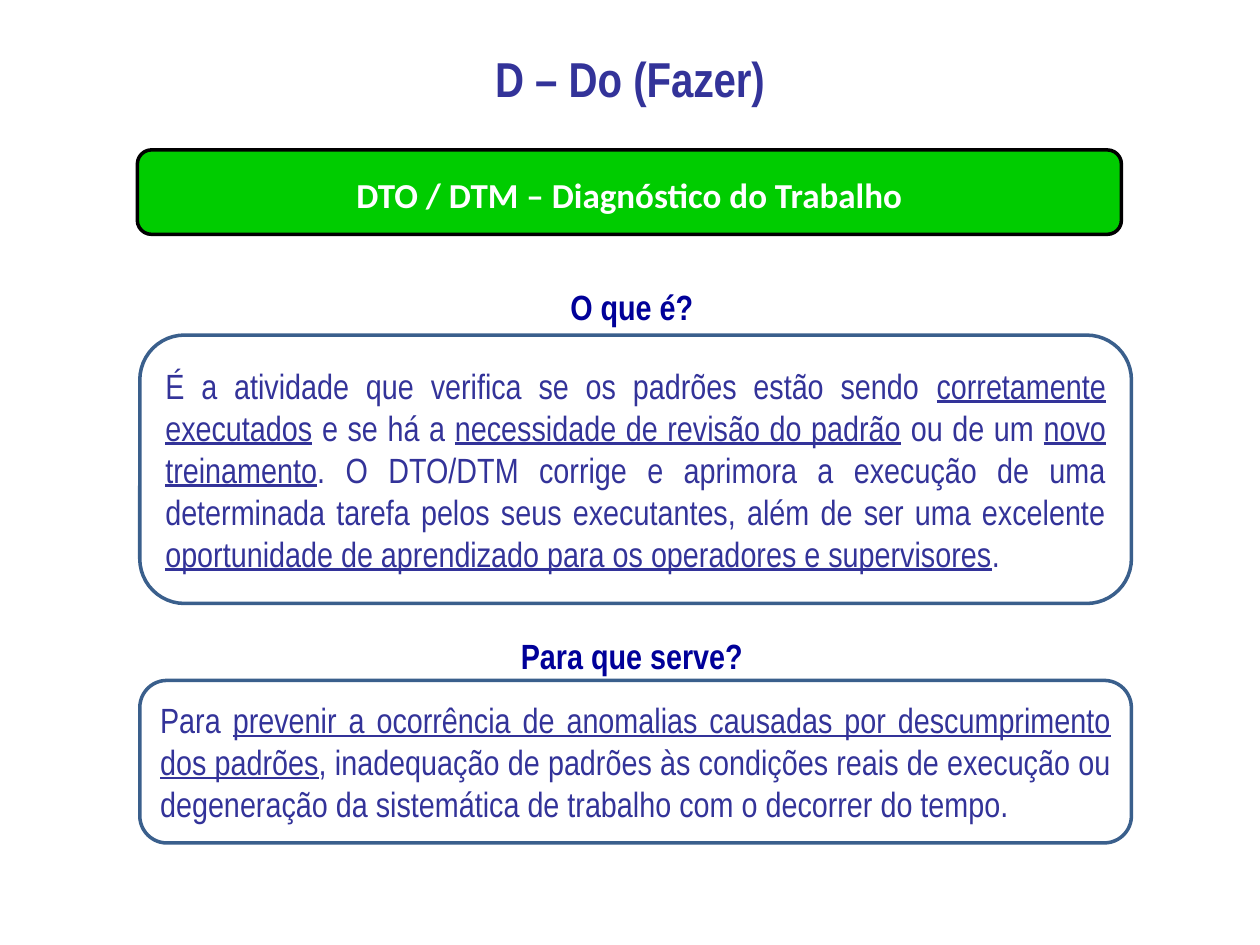
from pptx import Presentation
from pptx.dml.color import RGBColor
from pptx.enum.shapes import MSO_SHAPE as Shape
from pptx.enum.text import MSO_ANCHOR as Anchor, PP_ALIGN as Align
from pptx.util import Inches, Pt

COLORS = {
    "indigo": "333399",
    "navy": "000099",
    "steel": "3A5F8C",
    "green": "00CC00",
    "black": "000000",
    "white": "FFFFFF",
}
NARROW = "Arial Narrow"

deck = Presentation()
deck.slide_width, deck.slide_height = Inches(10), Inches(7.5)
page = deck.slides.add_slide(deck.slide_layouts[6])
column = deck.slide_width / 100
row = deck.slide_height / 75


def add_box(left, top, width, height, outline=None, fill=None):
    area = [int(left * column), int(top * row), int(width * column), int(height * row)]
    if outline:
        box = page.shapes.add_shape(Shape.ROUNDED_RECTANGLE, *area)
        box.shadow.inherit = False
        box.line.color.rgb = RGBColor.from_string(COLORS[outline])
        box.line.width = Pt(2)
        if fill:
            box.fill.solid()
            box.fill.fore_color.rgb = RGBColor.from_string(COLORS[fill])
        else:
            box.fill.background()
    else:
        box = page.shapes.add_textbox(*area)
    box.text_frame.word_wrap = True
    return box.text_frame


def write(frame, pieces, color, size=20, font=NARROW, bold=False,
          align=Align.CENTER, spacing=1.0, anchor=Anchor.MIDDLE):
    frame.vertical_anchor = anchor
    para = frame.paragraphs[0]
    para.alignment = align
    para.line_spacing = spacing
    for number, piece in enumerate(pieces):
        span = para.add_run()
        span.text = piece
        span.font.name = font
        span.font.size = Pt(size)
        span.font.bold = bold
        span.font.underline = number % 2 == 1
        span.font.color.rgb = RGBColor.from_string(COLORS[color])


write(add_box(0, 2.9, 100, 6.1), ["D – Do (Fazer)"], "indigo", size=28, bold=True, spacing=1.1)
write(add_box(10.9, 11.9, 78.1, 6.7, "black", "green"),
      ["DTO / DTM – Diagnóstico do Trabalho"], "white", font="Calibri", bold=True, spacing=1.1)

sections = [
    ("O que é?", 20.8, 5.7, 26.6, 21.3, [
        "É a atividade que verifica se os padrões estão sendo ",
        "corretamente executados",
        " e se há a ",
        "necessidade de revisão do padrão",
        " ou de um ",
        "novo treinamento",
        ". O DTO/DTM corrige e aprimora a execução de uma determinada tarefa pelos seus "
        "executantes, além de ser uma excelente ",
        "oportunidade de aprendizado para os operadores e supervisores",
        ".",
    ]),
    ("Para que serve?", 48.5, 5.2, 54, 12.9, [
        "Para ",
        "prevenir a ocorrência de anomalias causadas por descumprimento dos padrões",
        ", inadequação de padrões às condições reais de execução ou degeneração da "
        "sistemática de trabalho com o decorrer do tempo.",
    ]),
]
for question, question_top, question_height, answer_top, answer_height, answer in sections:
    write(add_box(11.1, question_top, 78.1, question_height), [question], "navy",
          bold=True, spacing=1.4, anchor=Anchor.TOP)
    write(add_box(11.1, answer_top, 78.7, answer_height, "steel"), answer, "indigo",
          align=Align.JUSTIFY)

deck.save("out.pptx")
